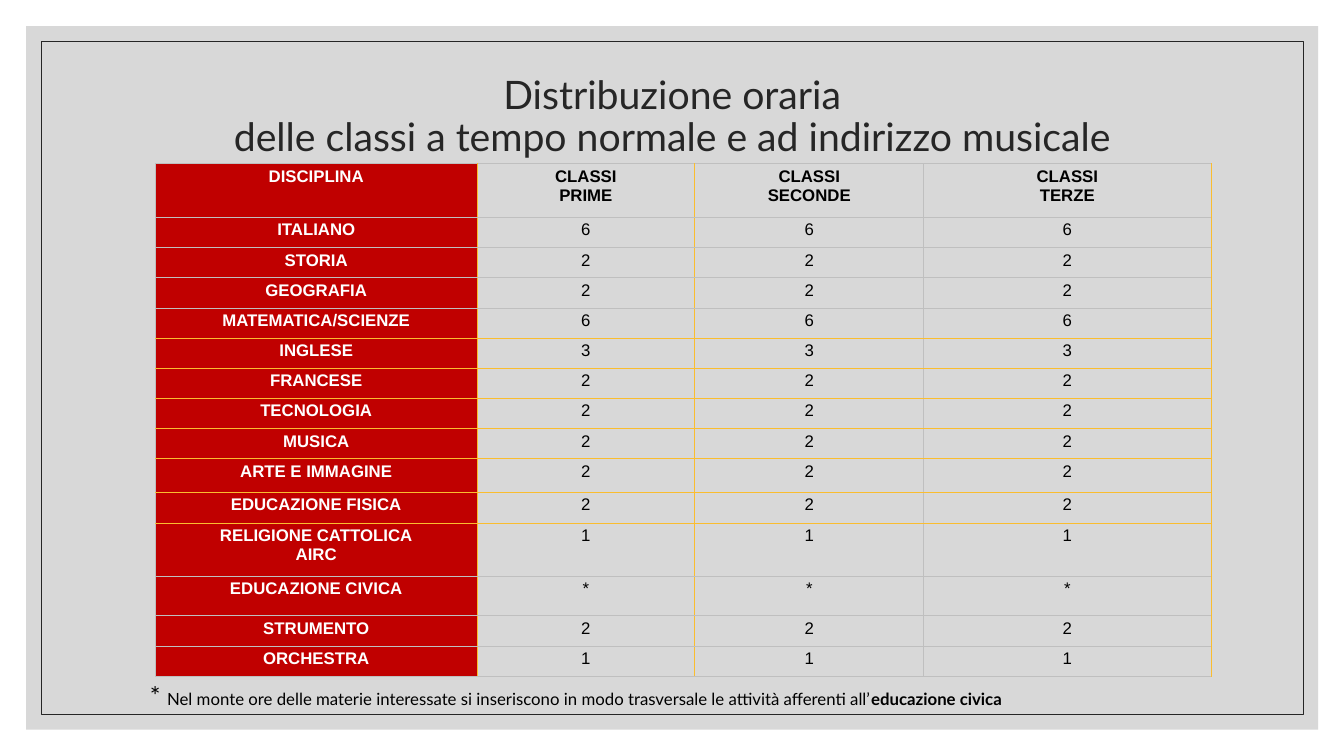
from lxml import etree
from pptx import Presentation
from pptx.dml.color import RGBColor
from pptx.enum.shapes import MSO_SHAPE
from pptx.enum.text import MSO_ANCHOR, PP_ALIGN
from pptx.oxml.ns import qn
from pptx.util import Cm, Pt

RECT = MSO_SHAPE.RECTANGLE
LEFT, MID = PP_ALIGN.LEFT, PP_ALIGN.CENTER

# Content
TITLE = "Distribuzione oraria\ndelle classi a tempo normale e ad indirizzo musicale"
HEADS = ["DISCIPLINA", "CLASSI\nPRIME", "CLASSI\nSECONDE", "CLASSI\nTERZE"]
# Subject, hours (the same in all three years), row height in cm
HOURS = [
    ("ITALIANO", "6", 0.76),
    ("STORIA", "2", 0.76),
    ("GEOGRAFIA", "2", 0.76),
    ("MATEMATICA/SCIENZE", "6", 0.76),
    ("INGLESE", "3", 0.76),
    ("FRANCESE", "2", 0.76),
    ("TECNOLOGIA", "2", 0.76),
    ("MUSICA", "2", 0.76),
    ("ARTE E IMMAGINE", "2", 0.84),
    ("EDUCAZIONE FISICA", "2", 0.78),
    ("RELIGIONE CATTOLICA\nAIRC", "1", 1.34),
    ("EDUCAZIONE CIVICA", "*", 1.0),
    ("STRUMENTO", "2", 0.76),
    ("ORCHESTRA", "1", 0.76),
]
NOTE = [
    ("* ", 18, False),
    ("Nel monte ore delle materie interessate si inseriscono in modo "
     "trasversale le attività afferenti all’", 12, False),
    ("educazione civica", 12, True),
]

# Look
WIDTHS = [8.1, 5.49, 5.77, 7.24]
HEAD_H = 1.35
RED, GOLD, GREY = "C00000", "FABD2F", "BFBFBF"
BLACK, WHITE, DARK = "000000", "FFFFFF", "262626"
SIDES = [GREY, GOLD, GOLD, GREY, GOLD]  # vertical rules, left to right
GOLD_ROWS = range(5, 12)                # horizontal rules drawn in gold


def color(code):
    return RGBColor.from_string(code)


def write(par, text, size=12, font="Arial", ink=BLACK, bold=False, align=MID):
    par.alignment = align
    for i, line in enumerate(text.split("\n")):
        if i:
            par.add_line_break()
        run = par.add_run()
        run.text = line
        run.font.size, run.font.name, run.font.bold = Pt(size), font, bold
        run.font.color.rgb = color(ink)


def panel(slide, x, y, w, h):
    box = slide.shapes.add_shape(RECT, Cm(x), Cm(y), Cm(w), Cm(h))
    box.shadow.inherit = False
    return box


def frame(slide, x, y, w, h):
    text = slide.shapes.add_textbox(Cm(x), Cm(y), Cm(w), Cm(h)).text_frame
    text.word_wrap = True
    return text


def rule(cell, side, code):
    line = etree.SubElement(cell._tc.get_or_add_tcPr(), qn("a:ln" + side), w="9525")
    fill = etree.SubElement(line, qn("a:solidFill"))
    etree.SubElement(fill, qn("a:srgbClr"), val=code)


def level(row):
    return GOLD if row in GOLD_ROWS else GREY


def style(cell, row, col):
    cell.margin_left = cell.margin_right = Cm(0.08)
    cell.margin_top = cell.margin_bottom = Cm(0.08)
    rule(cell, "L", SIDES[col])
    rule(cell, "R", SIDES[col + 1])
    rule(cell, "T", level(row))
    rule(cell, "B", level(row + 1))
    if col == 0:
        cell.fill.solid()
        cell.fill.fore_color.rgb = color(RED)
    else:
        cell.fill.background()


def main():
    deck = Presentation()
    deck.slide_width, deck.slide_height = Cm(33.87), Cm(19.05)
    slide = deck.slides.add_slide(deck.slide_layouts[6])

    # Grey panel and thin border
    back = panel(slide, 0.66, 0.66, 32.56, 17.73)
    back.fill.solid()
    back.fill.fore_color.rgb = color(GREY)
    back.line.fill.background()
    tint = back._element.spPr.find(qn("a:solidFill"))[0]
    etree.SubElement(tint, qn("a:alpha"), val="60000")
    edge = panel(slide, 1.04, 1.04, 31.8, 16.97)
    edge.fill.background()
    edge.line.color.rgb = color(DARK)
    edge.line.width = Pt(0.75)

    # Title
    head = frame(slide, 2.97, 1.07, 27.94, 3.81)
    head.vertical_anchor = MSO_ANCHOR.MIDDLE
    head.paragraphs[0].line_spacing = 0.9
    write(head.paragraphs[0], TITLE, size=28, font="Lato", ink=DARK)

    # Timetable
    rows = [HEADS] + [[name] + [hours] * 3 for name, hours, _ in HOURS]
    tall = [HEAD_H] + [height for _, _, height in HOURS]
    grid = slide.shapes.add_table(len(rows), len(WIDTHS), Cm(3.92), Cm(4.13),
                                  Cm(sum(WIDTHS)), Cm(sum(tall))).table
    grid.first_row = grid.horz_banding = False
    for col, width in enumerate(WIDTHS):
        grid.columns[col].width = Cm(width)
    for r, row in enumerate(rows):
        grid.rows[r].height = Cm(tall[r])
        for c, value in enumerate(row):
            cell = grid.cell(r, c)
            style(cell, r, c)
            text = cell.text_frame
            for i, line in enumerate(value.split("\n")):
                par = text.add_paragraph() if i else text.paragraphs[0]
                write(par, line, ink=BLACK if c else WHITE,
                      bold=r == 0 or c == 0)

    # Footnote
    foot = frame(slide, 3.53, 17.02, 25.91, 1.02)
    for part, size, bold in NOTE:
        write(foot.paragraphs[0], part, size=size, font="Lato", bold=bold, align=LEFT)

    deck.save("out.pptx")


if __name__ == "__main__":
    main()
